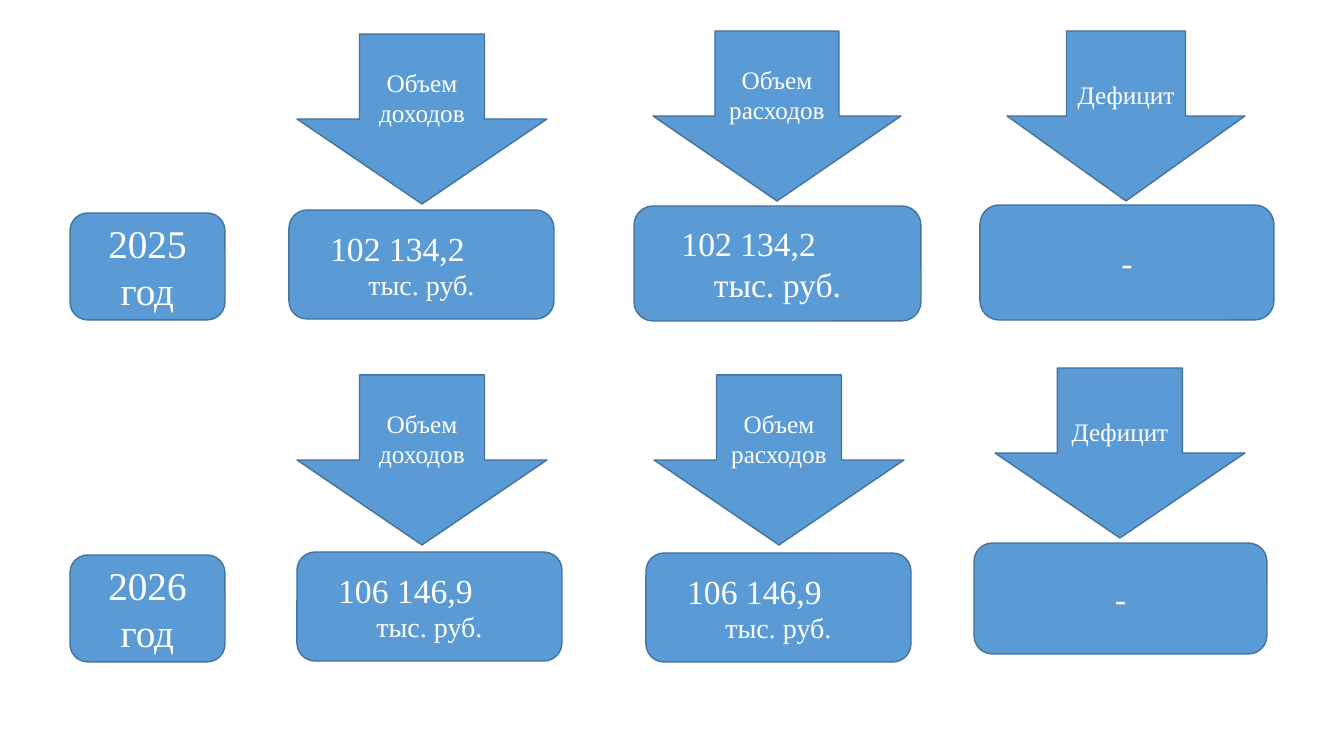
from pptx import Presentation
from pptx.dml.color import RGBColor
from pptx.enum.shapes import MSO_SHAPE
from pptx.enum.text import MSO_ANCHOR, PP_ALIGN
from pptx.util import Emu, Pt

ARROW = MSO_SHAPE.DOWN_ARROW
CARD = MSO_SHAPE.ROUNDED_RECTANGLE
MIDDLE = MSO_ANCHOR.MIDDLE
CENTER = PP_ALIGN.CENTER
LEFT = PP_ALIGN.LEFT

COLORS = {"fill": "5B9BD5", "line": "43739E", "text": "FFFFFF"}
FONT = "Times New Roman"
ARROW_HEIGHT = 170
UNIT = "тыс. руб."
INCOME, EXPENSE, DEFICIT = "Объем доходов", "Объем расходов", "Дефицит"


def px(length):
    return Emu(round(length * 914400 / 100.8))


def color(name):
    return RGBColor.from_string(COLORS[name])


class BudgetSlide:
    def __init__(self, presentation):
        self.slide = presentation.slides.add_slide(presentation.slide_layouts[6])

    def block(self, kind, box):
        shape = self.slide.shapes.add_shape(kind, *map(px, box))
        shape.shadow.inherit = False
        shape.fill.solid()
        shape.fill.fore_color.rgb = color("fill")
        shape.line.color.rgb = color("line")
        shape.line.width = Pt(1)
        shape.text_frame.word_wrap = True
        shape.text_frame.vertical_anchor = MIDDLE
        return shape.text_frame

    def add_text(self, paragraph, text, size, align=CENTER):
        paragraph.alignment = align
        run = paragraph.add_run()
        run.text = text
        run.font.name = FONT
        run.font.size = Pt(size)
        run.font.color.rgb = color("text")

    def arrow(self, label, left, top, width):
        frame = self.block(ARROW, (left, top, width, ARROW_HEIGHT))
        self.add_text(frame.paragraphs[0], label, 18)

    def card(self, text, box, size):
        self.add_text(self.block(CARD, box).paragraphs[0], text, size)

    def amount(self, value, box, indent, unit_size):
        frame = self.block(CARD, box)
        number = frame.paragraphs[0]
        self.add_text(number, value, 24, LEFT)
        number._p.get_or_add_pPr().set("marL", str(px(indent)))
        self.add_text(frame.add_paragraph(), UNIT, unit_size)


YEARS = [
    {
        "year": ("2025 год", (70, 213, 155, 107)),
        "arrows": [(INCOME, 297, 34, 250), (EXPENSE, 653, 31, 248),
                   (DEFICIT, 1007, 31, 238)],
        "amounts": [("102 134,2", (289, 210, 265, 109), 26, 20),
                    ("102 134,2", (634, 206, 287, 115), 32, 24)],
        "deficit": (980, 205, 294, 115),
    },
    {
        "year": ("2026 год", (70, 555, 155, 107)),
        "arrows": [(INCOME, 297, 375, 250), (EXPENSE, 654, 375, 250),
                   (DEFICIT, 995, 368, 250)],
        "amounts": [("106 146,9", (297, 552, 265, 109), 26, 20),
                    ("106 146,9", (646, 553, 265, 109), 26, 20)],
        "deficit": (974, 543, 293, 111),
    },
]


def main():
    presentation = Presentation()
    presentation.slide_width = px(1344)
    presentation.slide_height = px(756)
    budget = BudgetSlide(presentation)
    for row in YEARS:
        label, box = row["year"]
        budget.card(label, box, 28)
        for arrow in row["arrows"]:
            budget.arrow(*arrow)
        for amount in row["amounts"]:
            budget.amount(*amount)
        budget.card("-", row["deficit"], 24)
    presentation.save("out.pptx")


if __name__ == "__main__":
    main()
